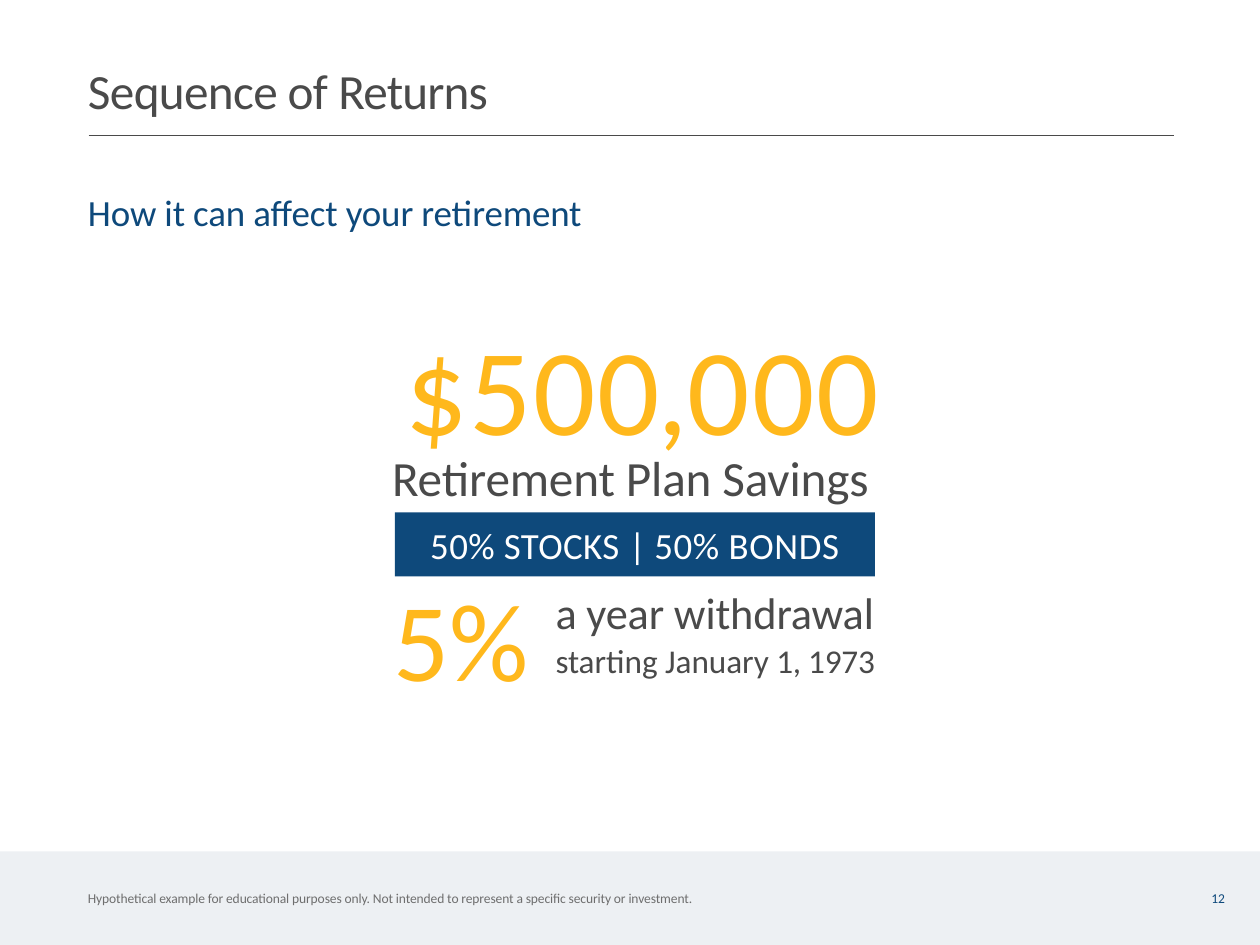
from dataclasses import dataclass

import pptx
import pptx.dml.color
import pptx.enum.shapes
import pptx.enum.text
import pptx.util
from lxml import etree

Pt = pptx.util.Pt
ALIGN = pptx.enum.text.PP_ALIGN
ANCHOR = pptx.enum.text.MSO_ANCHOR

WIDTH, HEIGHT = 1024, 768
MARGIN = 71.5
FOOTER_TOP = 692
FOOTER_TEXT_TOP = 721.5
DETAIL_LEFT = 451.5
FONT = "Calibri"
NAVY, GOLD, DARK, GRAY = "0E497B", "FFB81C", "4A4A4A", "6E6E6E"
PALE, WHITE = "EDF0F3", "FFFFFF"


@dataclass(frozen=True)
class Label:
    runs: tuple[tuple[str, float], ...]  # text and letter spacing in points
    left: float
    top: float
    width: float
    height: float
    size: float
    color: str
    align: ALIGN = ALIGN.LEFT


LABELS = (
    Label((("Sequence of ", -0.5), ("Returns", -0.7)),
          MARGIN, 47.5, 333, 50, 40, DARK),
    Label((("How it can affect your retirement", -0.1),),
          MARGIN, 152.6, 408, 38, 30, NAVY),
    Label((("$50", 1.6), ("0,", -2.4), ("000", 1.6)),
          314, 252, 415.5, 122, 100, GOLD, ALIGN.CENTER),
    Label((("Retirement Plan Savings", -0.1),),
          290, 361.5, 444.5, 50, 40, DARK, ALIGN.CENTER),
    Label((("5%", 0.4),), 319.5, 462.2, 112.5, 110, 90, GOLD),
    Label((("a year withdrawal", -0.1),),
          DETAIL_LEFT, 473.8, 348.5, 45, 36, DARK),
    Label((("starting January ", -0.05), ("1, 1973", -0.2)),
          DETAIL_LEFT, 518.4, 348.5, 34, 27, DARK),
    Label((("Hypothetical example for educational purposes only. "
            "Not intended to represent a specific security or investment.", -0.1),),
          MARGIN, FOOTER_TEXT_TOP, 537, 14.5, 11, GRAY),
    Label((("12", 0),), 984.5, FOOTER_TEXT_TOP, 20, 14.5, 11, NAVY),
)
ALLOCATION = Label(
    (("50% STOCKS ", 0.35), ("| ", 0), ("50% BONDS", 0.5)),
    321, 416.5, 390, 52, 30, WHITE, ALIGN.CENTER)


def rgb(color: str) -> pptx.dml.color.RGBColor:
    return pptx.dml.color.RGBColor.from_string(color)


def write_label(shape, label: Label, top_inset: float, anchor: ANCHOR) -> None:
    frame = shape.text_frame
    frame.word_wrap = True
    frame.vertical_anchor = anchor
    frame.margin_left = frame.margin_right = frame.margin_bottom = 0
    frame.margin_top = Pt(top_inset)
    paragraph = frame.paragraphs[0]
    paragraph.alignment = label.align
    paragraph.font.name = FONT
    paragraph.font.size = Pt(label.size)
    paragraph.font.color.rgb = rgb(label.color)
    for text, spacing in label.runs:
        run = paragraph.add_run()
        run.text = text
        run.font._element.set("spc", str(round(spacing * 100)))


def add_label(slide, label: Label) -> None:
    shape = slide.shapes.add_textbox(
        Pt(label.left), Pt(label.top), Pt(label.width), Pt(label.height))
    write_label(shape, label, 1.7, ANCHOR.TOP)


def add_block(slide, left: float, top: float, width: float, height: float, fill: str):
    shape = slide.shapes.add_shape(
        pptx.enum.shapes.MSO_SHAPE.RECTANGLE,
        Pt(left), Pt(top), Pt(width), Pt(height))
    shape.shadow.inherit = False
    shape.fill.solid()
    shape.fill.fore_color.rgb = rgb(fill)
    shape.line.fill.background()
    return shape


def add_rule(slide, left: float, right: float, top: float, color: str) -> None:
    rule = slide.shapes.add_connector(
        pptx.enum.shapes.MSO_CONNECTOR.STRAIGHT,
        Pt(left), Pt(top), Pt(right), Pt(top))
    rule.line.color.rgb = rgb(color)
    rule.line.width = Pt(1)
    etree.SubElement(rule._element.spPr, pptx.oxml.ns.qn("a:effectLst"))


def main() -> None:
    presentation = pptx.Presentation()
    presentation.slide_width = Pt(WIDTH)
    presentation.slide_height = Pt(HEIGHT)
    slide = presentation.slides.add_slide(presentation.slide_layouts[6])

    # Footer band and title rule
    add_block(slide, 0, FOOTER_TOP, WIDTH, HEIGHT - FOOTER_TOP, PALE)
    add_rule(slide, 72, 954, 110, DARK)

    # Allocation bar
    bar = add_block(slide, ALLOCATION.left, ALLOCATION.top,
                    ALLOCATION.width, ALLOCATION.height, NAVY)
    write_label(bar, ALLOCATION, 0, ANCHOR.MIDDLE)

    # Headings, figures and footer text
    for label in LABELS:
        add_label(slide, label)

    presentation.save("out.pptx")


if __name__ == "__main__":
    main()
